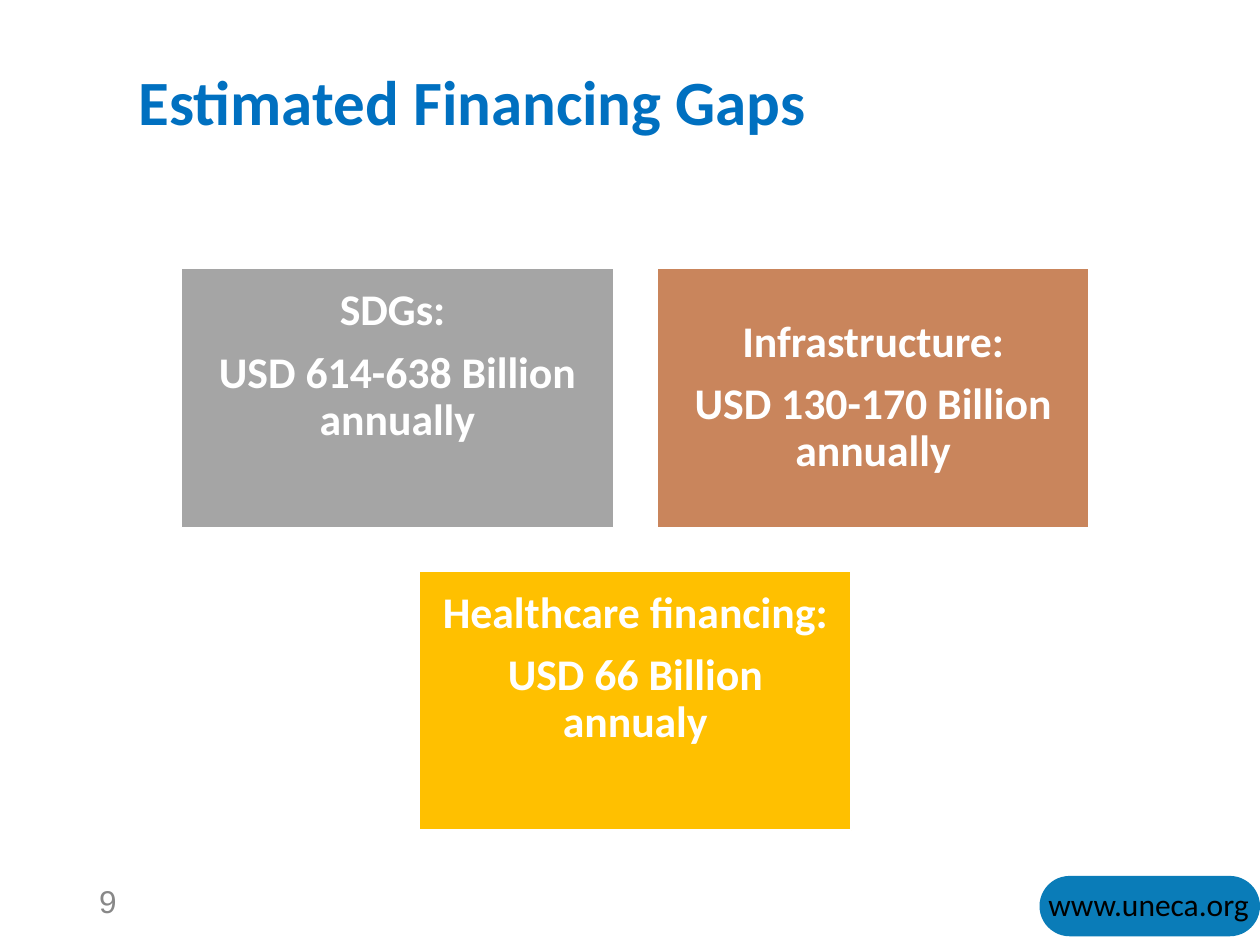
"""Builds the slide on estimated financing gaps."""
from pptx import Presentation
from pptx.dml.color import RGBColor
from pptx.enum.shapes import MSO_SHAPE
from pptx.enum.text import MSO_ANCHOR, PP_ALIGN
from pptx.util import Pt

THEME = {
    "title": {"name": "Calibri", "size": Pt(36), "bold": True, "color": "0070C0"},
    "gap": {"name": "Calibri", "size": Pt(25), "bold": True, "color": "FFFFFF"},
    "website": {"name": "Calibri", "size": Pt(18), "bold": False, "color": "000000"},
    "number": {"name": "Arial", "size": Pt(18), "bold": False, "color": "888888"},
    "fills": {"grey": "A5A5A5", "brown": "C9855C", "gold": "FFC000", "blue": "0A7CB8"},
    "outline": "FFFFFF",
}


def write_text(shape, lines, style, frame_format, paragraph_format):
    """Writes lines into a shape, one paragraph each."""
    frame = shape.text_frame
    for name, value in frame_format.items():
        setattr(frame, name, value)
    for index, line in enumerate(lines):
        paragraph = frame.add_paragraph() if index else frame.paragraphs[0]
        for name, value in paragraph_format.items():
            setattr(paragraph, name, value)
        run = paragraph.add_run()
        run.text = line
        for name, value in THEME[style].items():
            if name == "color":
                run.font.color.rgb = RGBColor.from_string(value)
            else:
                setattr(run.font, name, value)


def add_filled_shape(preset, left, top, width, height, fill):
    """Adds a shape with a solid fill and neither shadow nor line."""
    shape = slide.shapes.add_shape(preset, Pt(left), Pt(top), Pt(width), Pt(height))
    shape.shadow.inherit = False
    shape.fill.solid()
    shape.fill.fore_color.rgb = RGBColor.from_string(THEME["fills"][fill])
    shape.line.fill.background()
    return shape


presentation = Presentation()
presentation.slide_width, presentation.slide_height = Pt(720), Pt(540)
slide = presentation.slides.add_slide(presentation.slide_layouts[6])

margins = ("margin_left", "margin_top", "margin_right", "margin_bottom")
no_margins = dict.fromkeys(margins, 0)
middle = {"word_wrap": True, "vertical_anchor": MSO_ANCHOR.MIDDLE}
centred = {"alignment": PP_ALIGN.CENTER, "line_spacing": 0.9}

title = slide.shapes.add_textbox(Pt(60), Pt(40), Pt(420), Pt(39.6))
write_text(title, ["Estimated Financing Gaps"], "title", middle | no_margins, centred)

number = slide.shapes.add_textbox(Pt(49.5), Pt(500.5), Pt(162), Pt(28.75))
write_text(number, ["9"], "number", middle, {"alignment": PP_ALIGN.LEFT})

website = add_filled_shape(MSO_SHAPE.ROUNDED_RECTANGLE, 594, 500.5, 126, 34.5, "blue")
website.adjustments[0] = 0.5
write_text(website, ["www.uneca.org"], "website",
           no_margins | {"word_wrap": False, "vertical_anchor": MSO_ANCHOR.TOP},
           {"alignment": PP_ALIGN.LEFT})

box_width, box_height, spacing, inset = 246.9, 148.1, 24.9, 7.2
grid_left, grid_top = 103.7, 153.3
column_step, row_step = box_width + spacing, box_height + spacing
gaps = [
    (0, 0, "grey", ["SDGs: ", "USD 614-638 Billion annually"], 36),
    (1, 0, "brown", ["Infrastructure:", "USD 130-170 Billion annually"], 0),
    (0.5, 1, "gold", ["Healthcare financing:", "USD 66 Billion annualy"], 36),
]
for column, row, fill, lines, lift in gaps:
    box = add_filled_shape(MSO_SHAPE.RECTANGLE, grid_left + column * column_step,
                           grid_top + row * row_step, box_width, box_height, fill)
    box.line.color.rgb = RGBColor.from_string(THEME["outline"])
    box.line.width = Pt(1)
    box_margins = dict.fromkeys(margins, Pt(inset)) | {"margin_bottom": Pt(inset + lift)}
    write_text(box, lines, "gap", middle | box_margins, centred | {"space_after": Pt(8.5)})

presentation.save("out.pptx")
